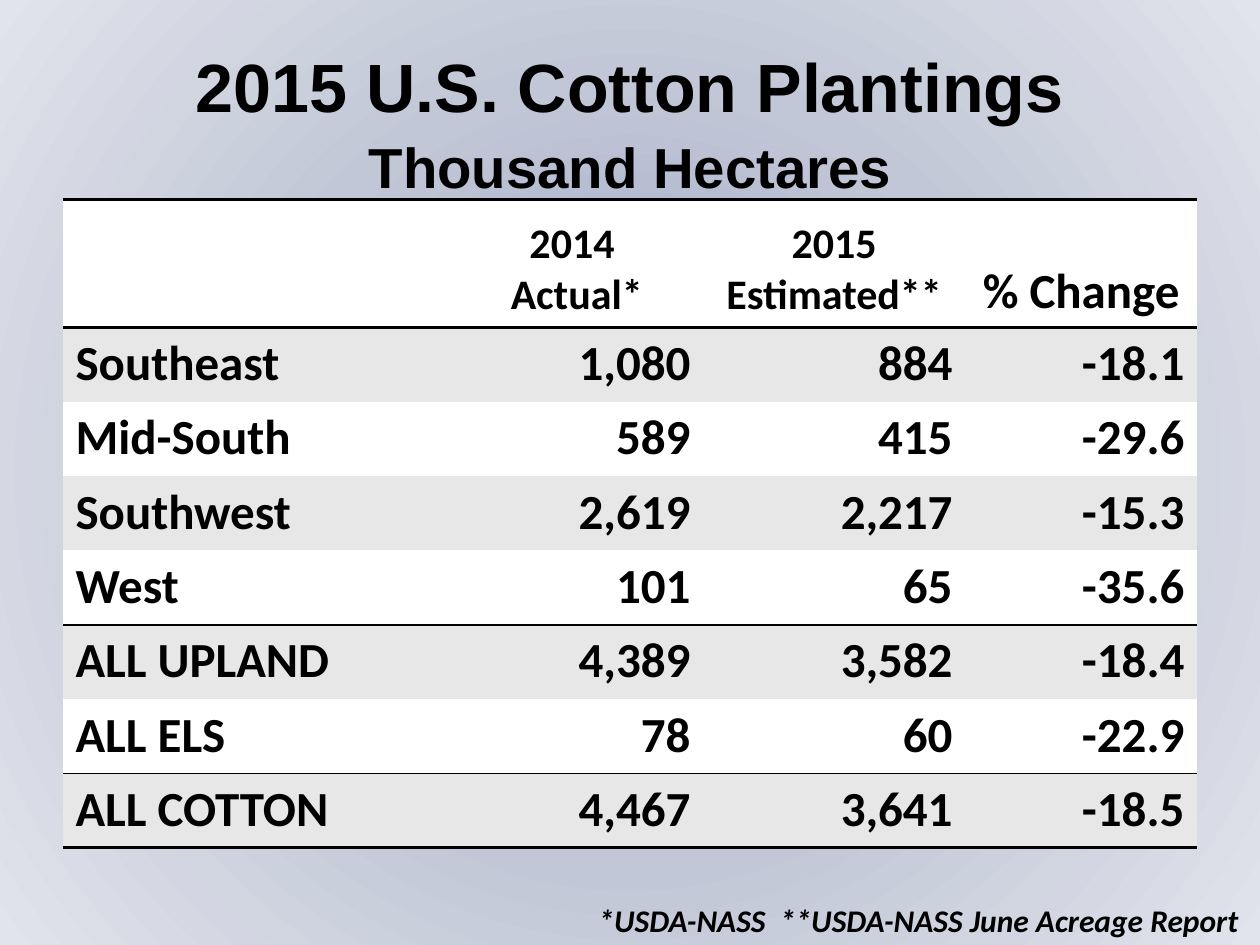
from lxml import etree
from pptx import Presentation
from pptx.dml.color import RGBColor
from pptx.enum.text import MSO_ANCHOR as Anchor, PP_ALIGN as Align
from pptx.oxml import parse_xml
from pptx.oxml.ns import nsdecls, qn
from pptx.util import Inches, Pt

# Content
TITLE = [("2015 U.S. Cotton Plantings", 39), ("Thousand Hectares", 32.2)]
HEADER = [([], 24), (["2014", " Actual*"], 24), (["2015 Estimated**"], 24), (["% Change"], 28)]
ROWS = [
    ("Southeast", "1,080", "884", "-18.1"),
    ("Mid-South", "589", "415", "-29.6"),
    ("Southwest", "2,619", "2,217", "-15.3"),
    ("West", "101", "65", "-35.6"),
    ("ALL UPLAND", "4,389", "3,582", "-18.4"),
    ("ALL ELS", "78", "60", "-22.9"),
    ("ALL COTTON", "4,467", "3,641", "-18.5"),
]
SOURCE_NOTE = "*USDA-NASS  **USDA-NASS June Acreage Report"

# Style
COLORS = {"text": "000000", "plain": "FFFFFF", "band": "E7E7E7", "rule": "000000"}
GRADIENT = [(0, "98A3C1"), (50, "C2C7D7"), (100, "E1E4EB")]
COLUMN_WIDTHS = [3, 2.08, 2.08, 1.84]
HEADER_HEIGHT, ROW_HEIGHT = 1.02, 0.59
RULES = {0: 2, 1: 2, 5: 1, 7: 1, 8: 2}  # points, by the row they lie above


def add_text(paragraph, text, size, align, font="Calibri", italic=None):
    paragraph.alignment = align
    run = paragraph.add_run()
    run.text = text
    run.font.name, run.font.size = font, Pt(size)
    run.font.bold, run.font.italic = True, italic
    run.font.color.rgb = RGBColor.from_string(COLORS["text"])


def set_background(slide):
    stops = "".join(f'<a:gs pos="{position * 1000}"><a:srgbClr val="{color}"/></a:gs>'
                    for position, color in GRADIENT)
    slide._element.cSld.insert(0, parse_xml(
        f'<p:bg {nsdecls("p", "a")}><p:bgPr><a:gradFill rotWithShape="1">'
        f'<a:gsLst>{stops}</a:gsLst><a:path path="circle">'
        '<a:fillToRect l="50000" t="50000" r="50000" b="50000"/></a:path>'
        '</a:gradFill><a:effectLst/></p:bgPr></p:bg>'))


def style_cell(cell, row):
    """Fill the cell and draw only the horizontal rules that touch its row."""
    properties = cell._tc.get_or_add_tcPr()
    widths = {"lnL": 0, "lnR": 0, "lnT": RULES.get(row, 0), "lnB": RULES.get(row + 1, 0)}
    for tag, width in widths.items():
        line = etree.SubElement(properties, qn(f"a:{tag}"), w=str(Pt(width)))
        if width:
            fill = etree.SubElement(line, qn("a:solidFill"))
            etree.SubElement(fill, qn("a:srgbClr"), val=COLORS["rule"])
        else:
            etree.SubElement(line, qn("a:noFill"))
    cell.fill.solid()
    cell.fill.fore_color.rgb = RGBColor.from_string(COLORS["band" if row % 2 else "plain"])


presentation = Presentation()
presentation.slide_width, presentation.slide_height = Inches(10), Inches(7.5)
slide = presentation.slides.add_slide(presentation.slide_layouts[5])
set_background(slide)

# Title
title = slide.shapes.title
title.left, title.top, title.width, title.height = map(Inches, (0.5, 0.3, 9, 1.25))
frame = title.text_frame
frame.vertical_anchor = Anchor.TOP
for index, (text, size) in enumerate(TITLE):
    paragraph = frame.add_paragraph() if index else frame.paragraphs[0]
    paragraph.space_before = Pt(3.3)
    add_text(paragraph, text, size, Align.CENTER, "Arial")

# Table
table = slide.shapes.add_table(
    len(ROWS) + 1, len(COLUMN_WIDTHS), Inches(0.5), Inches(1.58),
    Inches(sum(COLUMN_WIDTHS)), Inches(HEADER_HEIGHT + ROW_HEIGHT * len(ROWS))).table
for column, width in zip(table.columns, COLUMN_WIDTHS):
    column.width = Inches(width)
for index, row in enumerate(table.rows):
    row.height = Inches(ROW_HEIGHT if index else HEADER_HEIGHT)
    for column, cell in enumerate(row.cells):
        style_cell(cell, index)
        if index:
            align = Align.RIGHT if column else Align.LEFT
            lines, size = [ROWS[index - 1][column]], 28
        else:
            align = Align.CENTER
            lines, size = HEADER[column]
            cell.vertical_anchor = Anchor.BOTTOM
        for number, text in enumerate(lines):
            frame = cell.text_frame
            paragraph = frame.add_paragraph() if number else frame.paragraphs[0]
            add_text(paragraph, text, size, align)

# Source note
note = slide.shapes.add_textbox(*map(Inches, (3.75, 7.1, 6.25, 0.4)))
note.text_frame.word_wrap = True
note.text_frame.margin_right = Inches(0.17)
add_text(note.text_frame.paragraphs[0], SOURCE_NOTE, 18, Align.RIGHT, italic=True)

presentation.save("out.pptx")
